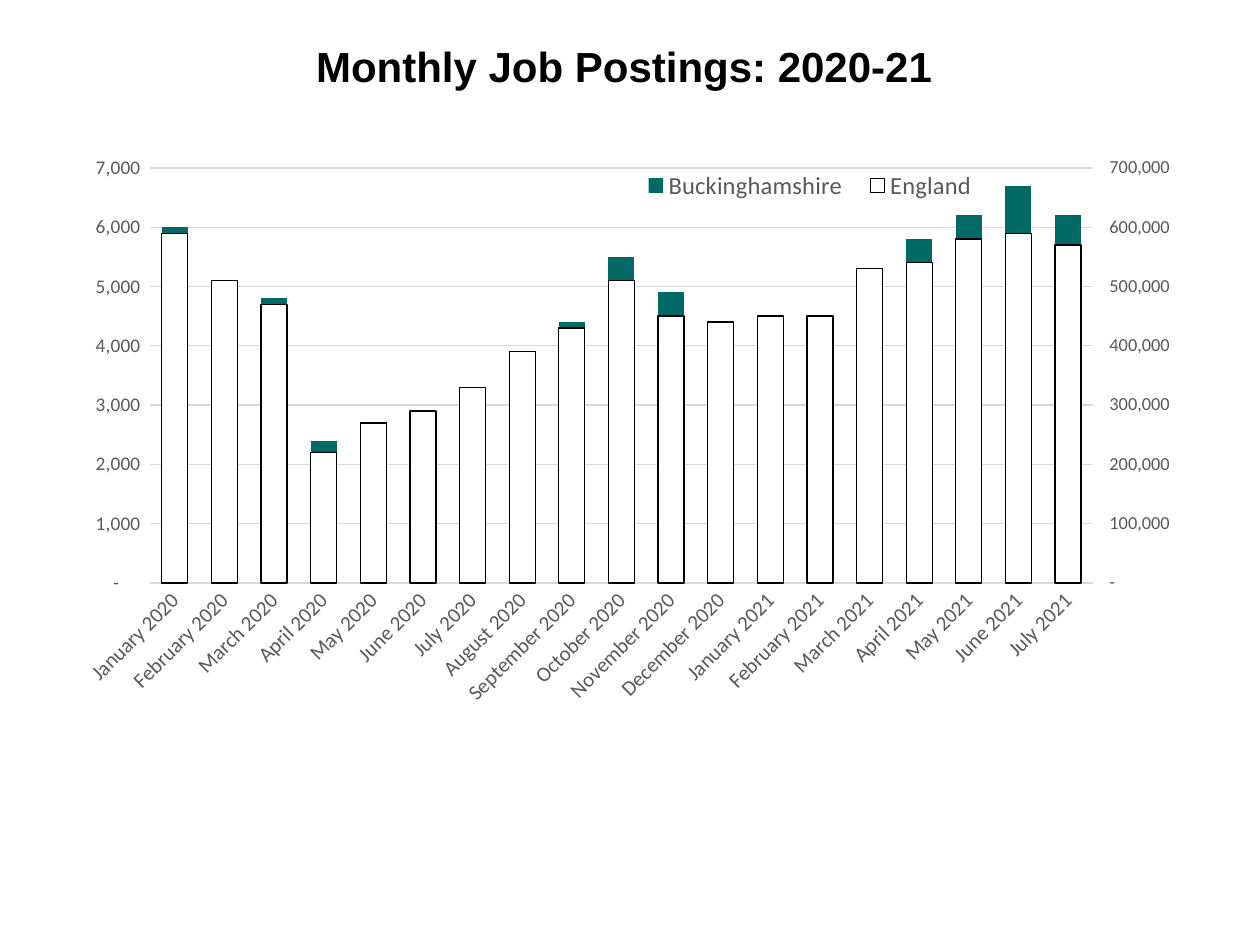
from copy import deepcopy
from lxml import etree
from pptx import Presentation
from pptx.chart.axis import ValueAxis
from pptx.chart.data import CategoryChartData as Data
from pptx.dml.color import RGBColor
from pptx.enum.chart import XL_CHART_TYPE as Kind, XL_LEGEND_POSITION as Pos, XL_TICK_MARK as Tick
from pptx.enum.text import MSO_ANCHOR as Anchor, PP_ALIGN as Align
from pptx.oxml.ns import qn
from pptx.util import Emu, Pt

TITLE = "Monthly Job Postings: 2020-21 "
MONTHS = ["January", "February", "March", "April", "May", "June", "July", "August",
          "September", "October", "November", "December"]
CATS = [f"{m} 2020" for m in MONTHS] + [f"{m} 2021" for m in MONTHS[:7]]
BUCKS = [6000, 5000, 4800, 2400, 2500, 2700, 3300, 3700, 4400, 5500,
         4900, 4000, 4500, 4500, 5300, 5800, 6200, 6700, 6200]
ENGLAND = [590000, 510000, 470000, 220000, 270000, 290000, 330000, 390000, 430000, 510000,
           450000, 440000, 450000, 450000, 530000, 540000, 580000, 590000, 570000]
FORMAT = '_-* #,##0_-;\\-* #,##0_-;_-* "-"??_-;_-@_'
GREY, RULE = "595959", "D9D9D9"
FRAME = (63, 144, 1134, 624)
PLOT = (150, 168, 943, 415)
LEGEND = (629, 170, 362, 31)


def px(n):
    return Emu(round(n * 914400 / 126))


def color(text):
    return RGBColor.from_string(text)


def style(font, name, size, tint, bold=False):
    font.name, font.size, font.bold = name, Pt(size), bold
    font.color.rgb = color(tint)


def rule(line, tint):
    line.color.rgb = color(tint)
    line.width = Pt(0.75)


def layout(box, inner=False):
    root = etree.Element(qn("c:layout"))
    man = etree.SubElement(root, qn("c:manualLayout"))
    x, y, w, h = box
    left, top, wide, high = FRAME
    vals = {"layoutTarget": "inner"} if inner else {}
    vals |= {"xMode": "edge", "yMode": "edge",
             "x": round((x - left) / wide, 4), "y": round((y - top) / high, 4),
             "w": round(w / wide, 4), "h": round(h / high, 4)}
    for tag, val in vals.items():
        etree.SubElement(man, qn(f"c:{tag}")).set("val", str(val))
    return root


def put(root, tag, val):
    root.find(qn(f"c:{tag}")).set("val", val)


deck = Presentation()
deck.slide_width, deck.slide_height = px(1260), px(945)
slide = deck.slides.add_slide(deck.slide_layouts[6])

box = slide.shapes.add_textbox(px(63), px(-13), px(1134), px(158))
frame = box.text_frame
frame.word_wrap = True
frame.vertical_anchor = Anchor.MIDDLE
para = frame.paragraphs[0]
para.alignment = Align.CENTER
run = para.add_run()
run.text = TITLE
style(run.font, "Arial", 24, "000000", True)

data = Data(number_format="#,##0")
data.categories = CATS
data.add_series("Buckinghamshire", BUCKS)
data.add_series("England", ENGLAND)
chart = slide.shapes.add_chart(Kind.COLUMN_CLUSTERED, *map(px, FRAME), data).chart
chart.has_title = False
style(chart.font, "Calibri", 10, "000000")
plot = chart.plots[0]
plot.gap_width = 91
plot.vary_by_categories = False
for ser, tint in zip(plot.series, ("006965", "FFFFFF")):
    ser.format.fill.solid()
    ser.format.fill.fore_color.rgb = color(tint)
    ser.invert_if_negative = False
rule(plot.series[1].format.line, "000000")

chart.has_legend = True
key = chart.legend
key.position = Pos.BOTTOM
key.include_in_layout = False
style(key.font, "Calibri", 14, GREY)
for old in key._element.findall(qn("c:layout")):
    key._element.remove(old)
key._element.find(qn("c:legendPos")).addnext(layout(LEGEND))

cat, val = chart.category_axis, chart.value_axis
for axis, size in ((cat, 12), (val, 11)):
    axis.major_tick_mark = axis.minor_tick_mark = Tick.NONE
    style(axis.tick_labels.font, "Calibri", size, GREY)
rule(cat.format.line, RULE)
cat._element.find(qn("c:txPr")).find(qn("a:bodyPr")).set("rot", "-2700000")
val.minimum_scale, val.maximum_scale, val.major_unit = 0, 7000, 1000
val.has_major_gridlines = True
rule(val.major_gridlines.format.line, RULE)
val.format.line.fill.background()
val.tick_labels.number_format = FORMAT
val.tick_labels.number_format_is_linked = False

area = chart._chartSpace.chart.plotArea
for old in area.findall(qn("c:layout")):
    area.remove(old)
area.insert(0, layout(PLOT, True))
bars = area.find(qn("c:barChart"))
twin = deepcopy(bars)
bars.remove(bars.findall(qn("c:ser"))[1])
twin.remove(twin.findall(qn("c:ser"))[0])
bars.addnext(twin)
for item, num in zip(twin.findall(qn("c:axId")), ("501", "502")):
    item.set("val", num)
base, side = deepcopy(cat._element), deepcopy(val._element)
val._element.addnext(side)
side.addnext(base)
for axis, own, other in ((base, "501", "502"), (side, "502", "501")):
    put(axis, "axId", own)
    put(axis, "crossAx", other)
put(base, "delete", "1")
put(side, "axPos", "r")
put(side, "crosses", "max")
right = ValueAxis(side)
right.has_major_gridlines = False
right.maximum_scale, right.major_unit = 700000, 100000
right.major_tick_mark = Tick.OUTSIDE
right.tick_labels.font.size = Pt(10.5)

deck.save("out.pptx")
